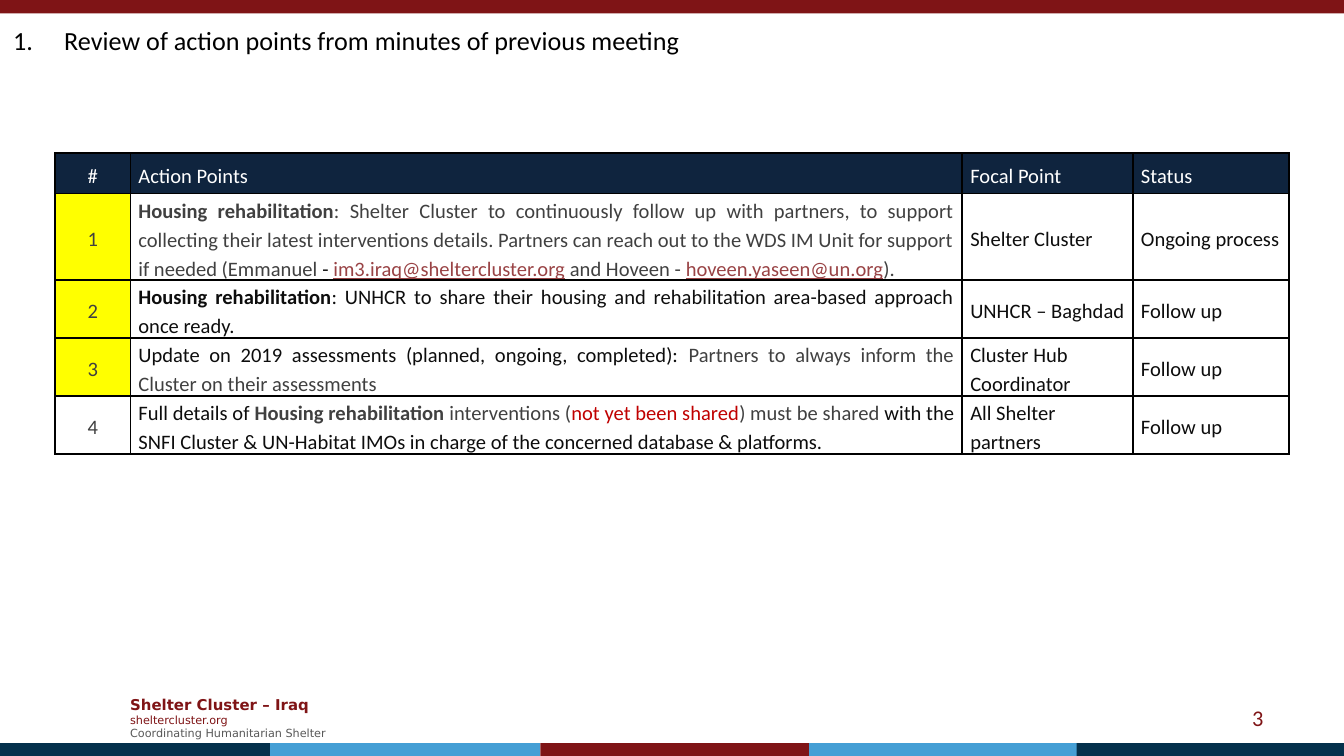
from dataclasses import dataclass

from lxml import etree
from pptx import Presentation
from pptx import util as u
from pptx.dml.color import RGBColor
from pptx.enum import shapes, text
from pptx.oxml import ns

LEFT, CENTER, RIGHT, JUSTIFY = (
    text.PP_ALIGN.LEFT, text.PP_ALIGN.CENTER, text.PP_ALIGN.RIGHT, text.PP_ALIGN.JUSTIFY)


@dataclass(frozen=True)
class Theme:
    red: str = "7F1416"
    navy: str = "04314C"
    blue: str = "459FD5"
    header: str = "0F243E"
    yellow: str = "FFFF00"
    white: str = "FFFFFF"
    black: str = "000000"
    ink: str = "0D0D0D"
    gray: str = "404040"
    footer: str = "595959"
    link: str = "994345"
    alert: str = "C00000"
    body_font: str = "Calibri"
    footer_font: str = "DejaVu Sans"
    title_size: float = 14
    number_size: float = 12
    table_size: float = 11
    brand_size: float = 8
    small_size: float = 6


@dataclass(frozen=True)
class Run:
    text: str
    color: str
    bold: bool = False
    underline: bool = False


class SlideBuilder:
    def __init__(self, slide, theme):
        self.slide = slide
        self.theme = theme

    def add_run(self, paragraph, run, size, font):
        piece = paragraph.add_run()
        piece.text = run.text
        piece.font.name = font
        piece.font.size = u.Pt(size)
        piece.font.color.rgb = RGBColor.from_string(run.color)
        piece.font.bold = run.bold
        piece.font.underline = run.underline

    def bar(self, left, top, width, height, color):
        shape = self.slide.shapes.add_shape(
            shapes.MSO_SHAPE.RECTANGLE, *map(u.Inches, (left, top, width, height)))
        shape.shadow.inherit = False
        shape.fill.solid()
        shape.fill.fore_color.rgb = RGBColor.from_string(color)
        shape.line.fill.background()

    def text_box(self, box, lines, font, align=LEFT, numbered=False):
        frame = self.slide.shapes.add_textbox(*map(u.Inches, box)).text_frame
        frame.word_wrap = True
        frame.vertical_anchor = text.MSO_ANCHOR.MIDDLE
        for index, (run, size) in enumerate(lines):
            paragraph = frame.add_paragraph() if index else frame.paragraphs[0]
            paragraph.alignment = align
            if numbered:
                properties = paragraph._p.get_or_add_pPr()
                properties.set("marL", str(u.Inches(0.38)))
                properties.set("indent", str(u.Inches(-0.38)))
                etree.SubElement(properties, ns.qn("a:buAutoNum"), type="arabicPeriod")
            self.add_run(paragraph, run, size, font)

    def border(self, cell):
        properties = cell._tc.get_or_add_tcPr()
        for index, side in enumerate(("lnL", "lnR", "lnT", "lnB")):
            line = etree.Element(ns.qn(f"a:{side}"), w=str(u.Pt(1)))
            fill = etree.SubElement(line, ns.qn("a:solidFill"))
            etree.SubElement(fill, ns.qn("a:srgbClr"), val=self.theme.black)
            properties.insert(index, line)

    def cell(self, cell, runs, align, fill):
        cell.vertical_anchor = text.MSO_ANCHOR.MIDDLE
        cell.margin_left = cell.margin_right = u.Inches(0.06)
        cell.margin_top, cell.margin_bottom = u.Inches(0.01), 0
        if fill:
            cell.fill.solid()
            cell.fill.fore_color.rgb = RGBColor.from_string(fill)
        else:
            cell.fill.background()
        self.border(cell)
        paragraph = cell.text_frame.paragraphs[0]
        paragraph.alignment = align
        paragraph.line_spacing = 1.15
        for run in runs:
            self.add_run(paragraph, run, self.theme.table_size, self.theme.body_font)

    def table(self, left, top, widths, heights, header, rows):
        theme = self.theme
        table = self.slide.shapes.add_table(
            len(heights), len(widths),
            *map(u.Inches, (left, top, sum(widths), sum(heights)))).table
        table.first_row = table.horz_banding = False
        for column, width in zip(table.columns, widths):
            column.width = u.Inches(width)
        for row, height in zip(table.rows, heights):
            row.height = u.Inches(height)
        for column, label in enumerate(header):
            self.cell(table.cell(0, column), [Run(label, theme.white)],
                      JUSTIFY if column else CENTER, theme.header)
        for number, (fill, action, focal_point, status) in enumerate(rows, 1):
            self.cell(table.cell(number, 0), [Run(str(number), theme.gray)], CENTER, fill)
            self.cell(table.cell(number, 1), action, JUSTIFY, None)
            self.cell(table.cell(number, 2), [Run(focal_point, theme.ink)], LEFT, None)
            self.cell(table.cell(number, 3), [Run(status, theme.ink)], JUSTIFY, None)


def main():
    presentation = Presentation()
    presentation.slide_width = u.Inches(10)
    presentation.slide_height = u.Inches(10 * 9 / 16)
    theme = Theme()
    builder = SlideBuilder(
        presentation.slides.add_slide(presentation.slide_layouts[6]), theme)

    builder.text_box((0.87, 5.12, 1.73, 0.44), [
        (Run("Shelter Cluster – Iraq", theme.red, bold=True), theme.brand_size),
        (Run("sheltercluster.org", theme.red), theme.small_size),
        (Run("Coordinating Humanitarian Shelter", theme.footer), theme.small_size),
    ], theme.footer_font)

    builder.bar(0, 0, 10, 0.1, theme.red)
    stripe_lefts = (0, 2.01, 4.02, 6.02, 8.01)
    stripe_colors = (theme.navy, theme.blue, theme.red, theme.blue, theme.navy)
    for left, color in zip(stripe_lefts, stripe_colors):
        builder.bar(left, 5.53, 2.01, 0.1, color)

    builder.text_box((7.17, 5.19, 2.33, 0.3), [(Run("3", theme.red), theme.number_size)],
                     theme.body_font, RIGHT)
    builder.text_box((0, 0.13, 10, 0.33), [
        (Run("Review of action points from minutes of previous meeting", theme.black),
         theme.title_size)], theme.body_font, numbered=True)

    rows = [
        (theme.yellow, [
            Run("Housing rehabilitation", theme.gray, bold=True),
            Run(": Shelter Cluster to continuously follow up with partners, to support "
                "collecting their latest interventions details. Partners can reach out to "
                "the WDS IM Unit for support if needed (Emmanuel ", theme.gray),
            Run("- ", theme.ink),
            Run("im3.iraq@sheltercluster.org", theme.link, underline=True),
            Run(" and Hoveen - ", theme.gray),
            Run("hoveen.yaseen@un.org", theme.link, underline=True),
            Run(").", theme.gray),
        ], "Shelter Cluster", "Ongoing process"),
        (theme.yellow, [
            Run("Housing rehabilitation", theme.ink, bold=True),
            Run(": UNHCR to share their housing and rehabilitation area-based approach "
                "once ready.", theme.ink),
        ], "UNHCR – Baghdad", "Follow up"),
        (theme.yellow, [
            Run("Update on 2019 assessments (planned, ongoing, completed): ", theme.ink),
            Run("Partners to always inform the Cluster on their assessments", theme.gray),
        ], "Cluster Hub Coordinator", "Follow up"),
        (None, [
            Run("Full details of ", theme.ink),
            Run("Housing rehabilitation", theme.gray, bold=True),
            Run(" interventions (", theme.gray),
            Run("not yet been shared", theme.alert),
            Run(") must be shared ", theme.gray),
            Run("with the SNFI Cluster & UN-Habitat IMOs in charge of the concerned "
                "database & platforms.", theme.ink),
        ], "All Shelter partners", "Follow up"),
    ]
    builder.table(0.41, 1.14, (0.56, 6.19, 1.27, 1.16), (0.3, 0.64, 0.43, 0.43, 0.43),
                  ("#", "Action Points", "Focal Point", "Status"), rows)

    presentation.save("out.pptx")


if __name__ == "__main__":
    main()
